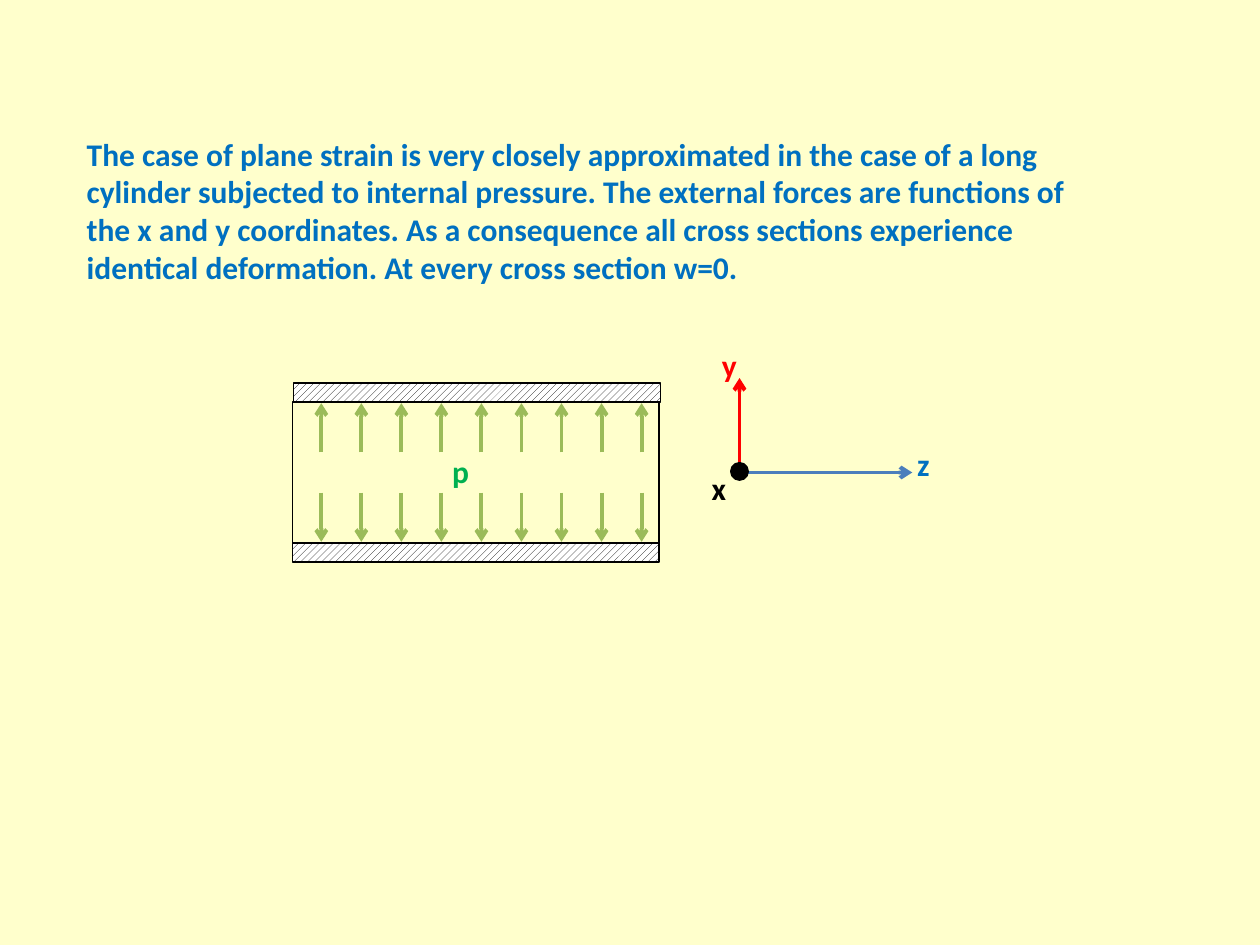
from lxml import etree
from pptx import Presentation
from pptx.dml.color import RGBColor
from pptx.enum.dml import MSO_PATTERN
from pptx.enum.shapes import MSO_CONNECTOR, MSO_SHAPE
from pptx.enum.text import MSO_AUTO_SIZE
from pptx.oxml.ns import qn
from pptx.util import Pt

CREAM = RGBColor(0xFF, 0xFF, 0xCC)
BLUE = RGBColor(0x00, 0x70, 0xC0)
AXIS_BLUE = RGBColor(0x4B, 0x7E, 0xBC)
RED = RGBColor(0xFF, 0x00, 0x00)
GREEN = RGBColor(0x00, 0xB0, 0x50)
OLIVE = RGBColor(0x9B, 0xBB, 0x59)
BLACK = RGBColor(0x00, 0x00, 0x00)
WHITE = RGBColor(0xFF, 0xFF, 0xFF)

ARROW_COUNT = 9
WALL_HEIGHT = 10.8


def add_text(shapes, text, left, top, width, height, color):
    box = shapes.add_textbox(Pt(left), Pt(top), Pt(width), Pt(height))
    frame = box.text_frame
    frame.word_wrap = True
    frame.auto_size = MSO_AUTO_SIZE.SHAPE_TO_FIT_TEXT
    run = frame.paragraphs[0].add_run()
    run.text = text
    run.font.name = "Calibri"
    run.font.size = Pt(18)
    run.font.bold = True
    run.font.color.rgb = color


def add_outline(shapes, kind, left, top, width, height, line_width):
    shape = shapes.add_shape(kind, Pt(left), Pt(top), Pt(width), Pt(height))
    shape.shadow.inherit = False
    shape.fill.background()
    shape.line.color.rgb = BLACK
    shape.line.width = Pt(line_width)
    return shape


def add_wall(shapes, left, top, width):
    wall = add_outline(shapes, MSO_SHAPE.RECTANGLE, left, top, width, WALL_HEIGHT, 0.75)
    wall.fill.patterned()
    wall.fill.pattern = MSO_PATTERN.WIDE_UPWARD_DIAGONAL
    wall.fill.fore_color.rgb = BLACK
    wall.fill.back_color.rgb = WHITE


def add_arrow(shapes, start_x, start_y, end_x, end_y, color):
    arrow = shapes.add_connector(
        MSO_CONNECTOR.STRAIGHT, Pt(start_x), Pt(start_y), Pt(end_x), Pt(end_y))
    arrow.line.color.rgb = color
    arrow.line.width = Pt(2.25)
    etree.SubElement(arrow.line._get_or_add_ln(), qn("a:tailEnd"), type="arrow")
    etree.SubElement(arrow._element.spPr, qn("a:effectLst"))


def add_cylinder(slide, left, top, width, height):
    shapes = slide.shapes.add_group_shape().shapes
    bottom = top + height
    add_outline(shapes, MSO_SHAPE.RECTANGLE, left, top + WALL_HEIGHT,
                width, height - 2 * WALL_HEIGHT, 0.75)
    add_wall(shapes, left, bottom - WALL_HEIGHT, width)
    add_wall(shapes, left + 0.7, top, width)
    for index in range(ARROW_COUNT):
        x = left + 16.6 + index * 22.88
        add_arrow(shapes, x, top + 39.6, x, top + 11.5, OLIVE)
        add_arrow(shapes, x, bottom - 39.6, x, bottom - 11.5, OLIVE)
    add_text(shapes, "p", left + 84.3, top + 36, 22.3, 29, GREEN)


def add_axes(slide, left, top, width, height):
    shapes = slide.shapes.add_group_shape().shapes
    origin_y = top + height
    radius = 4.4
    add_arrow(shapes, left, origin_y, left + width, origin_y, AXIS_BLUE)
    add_arrow(shapes, left, origin_y, left, top, RED)
    origin = add_outline(shapes, MSO_SHAPE.OVAL, left - radius, origin_y - 0.6 - radius,
                         2 * radius, 2 * radius, 2)
    origin.fill.solid()
    origin.fill.fore_color.rgb = BLACK
    add_text(shapes, "z", left + width - 4.3, origin_y - 19.2, 22.3, 29, BLUE)
    add_text(shapes, "y", left - 17.2, top - 21.6, 22.3, 29, RED)
    add_text(shapes, "x", left - 23, origin_y - 5.6, 22.3, 29, BLACK)


def main():
    presentation = Presentation()
    presentation.slide_width = Pt(720)
    presentation.slide_height = Pt(540)
    slide = presentation.slides.add_slide(presentation.slide_layouts[6])
    slide.background.fill.solid()
    slide.background.fill.fore_color.rgb = CREAM
    add_text(
        slide.shapes,
        "The case of plane strain is very closely approximated in the case of a long "
        "cylinder subjected to internal pressure. The external forces are functions of "
        "the x and y coordinates. As a consequence all cross sections experience "
        "identical deformation. At every cross section w=0.",
        42.5, 73.4, 584, 94.3, BLUE)
    add_cylinder(slide, 167, 218.9, 209.6, 102.2)
    add_axes(slide, 422.6, 216, 98.7, 54)
    presentation.save("out.pptx")


if __name__ == "__main__":
    main()
